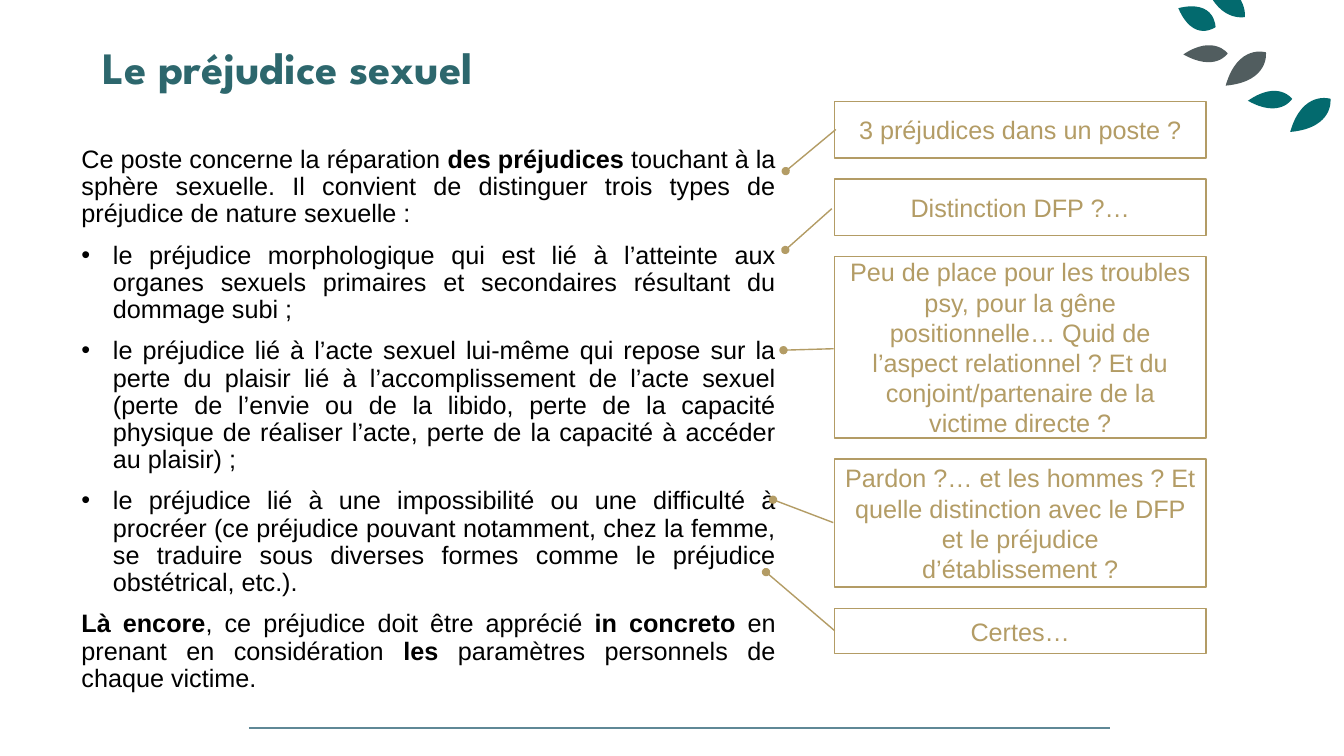
"""Build the slide on sexual prejudice, with margin callouts."""
import pptx
import pptx.util
import pptx.dml.color
import pptx.enum.shapes
import pptx.enum.text
from lxml import etree

Pt = pptx.util.Pt
SHAPE = pptx.enum.shapes.MSO_SHAPE
ALIGN = pptx.enum.text.PP_ALIGN
ANCHOR = pptx.enum.text.MSO_ANCHOR
NS = "{http://schemas.openxmlformats.org/drawingml/2006/main}"

TEAL, GREY, GOLD = "036A6E", "515D5F", "B39C65"
TITLE = "Le préjudice sexuel"
BODY = [
    (False, [("Ce poste concerne la réparation ", False),
             ("des préjudices", True),
             (" touchant à la sphère sexuelle. Il convient de distinguer trois types de "
              "préjudice de nature sexuelle :", False)]),
    (True, [("le préjudice morphologique qui est lié à l’atteinte aux organes sexuels "
             "primaires et secondaires résultant du dommage subi ;", False)]),
    (True, [("le préjudice lié à l’acte sexuel lui-même qui repose sur la perte du plaisir "
             "lié à l’accomplissement de l’acte sexuel (perte de l’envie ou de la libido, "
             "perte de la capacité physique de réaliser l’acte, perte de la capacité à "
             "accéder au plaisir) ;", False)]),
    (True, [("le préjudice lié à une impossibilité ou une difficulté à procréer (ce préjudice "
             "pouvant notamment, chez la femme, se traduire sous diverses formes comme le "
             "préjudice obstétrical, etc.).", False)]),
    (False, [("Là encore", True), (", ce préjudice doit être apprécié ", False),
             ("in concreto", True), (" en prenant en considération ", False),
             ("les", True), (" paramètres personnels de chaque victime.", False)]),
]
NOTES = [
    ("3 préjudices dans un poste ?", 40.3, (0.496, 0.004, 1.234, -0.131)),
    ("Distinction DFP ?…", 40.3, (0.526, -0.007, 1.258, -0.132)),
    ("Peu de place pour les troubles psy, pour la gêne positionnelle… Quid de l’aspect "
     "relationnel ? Et du conjoint/partenaire de la victime directe ?",
     129.6, (0.508, -0.002, 0.516, -0.137)),
    ("Pardon ?… et les hommes ? Et quelle distinction avec le DFP et le préjudice "
     "d’établissement ?", 91.4, (0.496, -0.003, 0.317, -0.165)),
    ("Certes…", 32.4, (0.496, 0.001, -0.798, -0.184)),
]
LEAVES = [
    (TEAL, (891.4, 72), (914.4, 85), (923, 70.6), (913, 56.9)),
    (TEAL, (921.6, 94.3), (953.3, 91.4), (950.4, 70.6), (930.2, 64.1)),
    (TEAL, (859.7, -15.8), (868.3, 16.6), (889.2, 12.2), (892.1, -9.4)),
    (TEAL, (841.7, 5.8), (852.5, 31), (868.3, 19.4), (868.3, -0.7)),
    (GREY, (845.3, 38.9), (868.3, 51.8), (877, 38.2), (866.9, 24.5)),
    (GREY, (875.5, 61.2), (907.2, 58.3), (904.3, 37.4), (884.2, 31)),
]
NOTE_X, NOTE_Y, NOTE_W, GAP = 596, 72.5, 265.5, 15.1
STEPS = 12


def paint(target, color):
    target.rgb = pptx.dml.color.RGBColor.from_string(color)


def style(para, name, size, color, bold=None):
    para.font.name, para.font.size, para.font.bold = name, Pt(size), bold
    paint(para.font.color, color)


def bullet(para):
    props = para._p.get_or_add_pPr()
    props.set("marL", str(Pt(22.5)))
    props.set("indent", str(-Pt(22.5)))
    etree.SubElement(props, NS + "buFont", typeface="Arial")
    etree.SubElement(props, NS + "buChar", char="•")


def text_box(slide, left, top, width, height):
    frame = slide.shapes.add_textbox(Pt(left), Pt(top), Pt(width), Pt(height)).text_frame
    frame.word_wrap = True
    return frame


def trace(a, b, c, d):
    for step in range(1, STEPS + 1):
        t = step / STEPS
        u = 1 - t
        yield tuple(Pt(u**3 * p + 3 * u * u * t * q + 3 * u * t * t * r + t**3 * s)
                    for p, q, r, s in zip(a, b, c, d))


def bend(leaf, curves):
    """Replace the straight outline by Bezier curves within the same frame."""
    route = next(leaf._element.iter(NS + "path"))
    for line in route.findall(NS + "lnTo"):
        route.remove(line)
    for index, points in enumerate(curves, 1):
        node = etree.Element(NS + "cubicBezTo")
        for x, y in points[1:]:
            etree.SubElement(node, NS + "pt", x=str(Pt(x) - leaf.left),
                             y=str(Pt(y) - leaf.top))
        route.insert(index, node)


def add_leaf(slide, color, base, low, tip, high):
    curves = [(base, low, tip, tip), (tip, tip, high, base)]
    pen = slide.shapes.build_freeform(Pt(base[0]), Pt(base[1]))
    pen.add_line_segments([point for points in curves for point in trace(*points)])
    leaf = pen.convert_to_shape()
    bend(leaf, curves)
    leaf.shadow.inherit = False
    leaf.fill.solid()
    paint(leaf.fill.fore_color, color)
    leaf.line.fill.background()


def add_rule(slide):
    rule = slide.shapes.add_connector(pptx.enum.shapes.MSO_CONNECTOR.STRAIGHT,
                                      Pt(177.8), Pt(519.8), Pt(792.7), Pt(519.8))
    paint(rule.line.color, "5F8896")
    rule.line.width = Pt(1.5)
    etree.SubElement(rule._element.spPr, NS + "effectLst")


def add_body(slide):
    frame = text_box(slide, 51.1, 101.2, 510, 313.2)
    for index, (listed, runs) in enumerate(BODY):
        para = frame.add_paragraph() if index else frame.paragraphs[0]
        para.alignment = ALIGN.JUSTIFY
        para.line_spacing = 0.9
        if index:
            para.space_before = Pt(10)
        if listed:
            bullet(para)
        style(para, "Arial", 18, "000000")
        for words, bold in runs:
            run = para.add_run()
            run.text = words
            if bold:
                run.font.bold = True


def add_note(slide, top, words, height, tail):
    note = slide.shapes.add_shape(SHAPE.LINE_CALLOUT_1, Pt(NOTE_X), Pt(top),
                                  Pt(NOTE_W), Pt(height))
    note.shadow.inherit = False
    for index, value in enumerate(tail):
        note.adjustments[index] = value
    note.fill.background()
    paint(note.line.color, GOLD)
    note.line.width = Pt(1)
    etree.SubElement(note.line._get_or_add_ln(), NS + "tailEnd", type="oval")
    frame = note.text_frame
    frame.word_wrap = True
    frame.vertical_anchor = ANCHOR.MIDDLE
    para = frame.paragraphs[0]
    para.text = words
    para.alignment = ALIGN.CENTER
    style(para, "Arial", 18, GOLD)


def main():
    deck = pptx.Presentation()
    deck.slide_width, deck.slide_height = Pt(960), Pt(540)
    slide = deck.slides.add_slide(deck.slide_layouts[6])
    add_rule(slide)
    for leaf in LEAVES:
        add_leaf(slide, *leaf)
    title = text_box(slide, 66.2, 28.8, 733.7, 72.7).paragraphs[0]
    title.text = TITLE
    title.line_spacing = 0.9
    style(title, "League Spartan", 32, "2D676D", True)
    add_body(slide)
    top = NOTE_Y
    for words, height, tail in NOTES:
        add_note(slide, top, words, height, tail)
        top += height + GAP
    deck.save("out.pptx")


if __name__ == "__main__":
    main()
